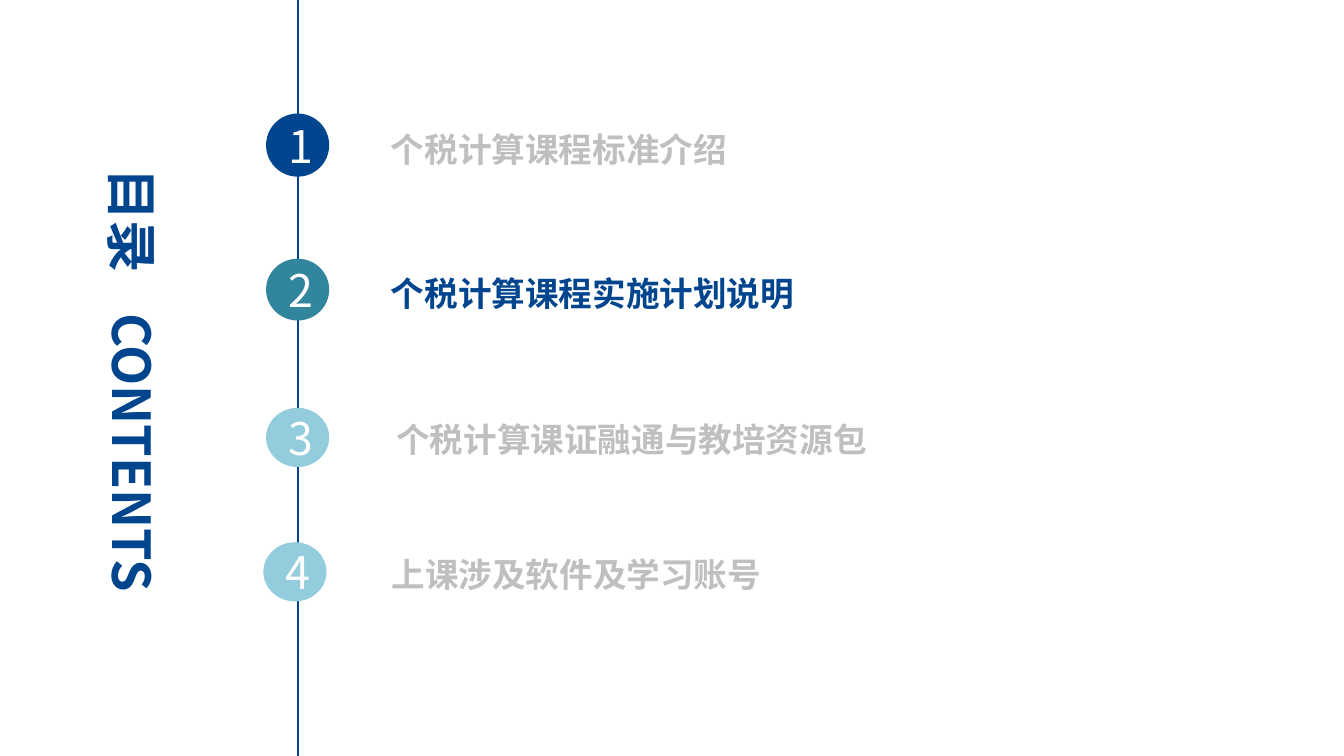
"""Build a contents slide with four numbered topics along a vertical line."""
import dataclasses

import lxml.etree
import pptx
import pptx.dml.color
import pptx.enum.shapes
import pptx.enum.text
import pptx.oxml.ns
import pptx.util

PX = 4572


@dataclasses.dataclass(frozen=True)
class Theme:
    navy: str = "01458E"
    teal: str = "31859C"
    sky: str = "93CDDD"
    gray: str = "BFBFBF"
    white: str = "FFFFFF"
    head: int = 28
    mark: int = 24
    body: int = 18
    line: float = 1.25
    latin: str = "Calibri"
    asian: str = "Noto Sans CJK SC"


def tint(code):
    return pptx.dml.color.RGBColor.from_string(code)


def place(*box):
    return [pptx.util.Emu(n * PX) for n in box]


class Deck:
    def __init__(self, theme, wide, high):
        self.theme = theme
        self.file = pptx.Presentation()
        self.file.slide_width, self.file.slide_height = place(wide, high)
        self.slide = self.file.slides.add_slide(self.file.slide_layouts[6])

    def run(self, para, text, size, color, face, bold=False):
        run = para.add_run()
        run.text = text
        font = run.font
        font.size = pptx.util.Pt(size)
        font.bold = bold
        font.color.rgb = tint(color)
        font.name = face
        east = lxml.etree.SubElement(font._element, pptx.oxml.ns.qn("a:ea"))
        east.set("typeface", self.theme.asian)

    def text(self, box, text, size, color, face, turn=0):
        shape = self.slide.shapes.add_textbox(*place(*box))
        shape.rotation = turn
        frame = shape.text_frame
        frame.word_wrap = not turn
        frame.auto_size = pptx.enum.text.MSO_AUTO_SIZE.SHAPE_TO_FIT_TEXT
        self.run(frame.paragraphs[0], text, size, color, face, True)

    def line(self, x, top, end):
        kind = pptx.enum.shapes.MSO_CONNECTOR.STRAIGHT
        line = self.slide.shapes.add_connector(kind, *place(x, top, x, end))
        line.line.color.rgb = tint(self.theme.navy)
        line.line.width = pptx.util.Pt(self.theme.line)
        props = line._element.spPr
        lxml.etree.SubElement(props, pptx.oxml.ns.qn("a:effectLst"))

    def badge(self, box, text, fill):
        kind = pptx.enum.shapes.MSO_SHAPE.OVAL
        shape = self.slide.shapes.add_shape(kind, *place(*box))
        shape.shadow.inherit = False
        shape.fill.solid()
        shape.fill.fore_color.rgb = tint(fill)
        shape.line.fill.background()
        frame = shape.text_frame
        frame.word_wrap = True
        frame.vertical_anchor = pptx.enum.text.MSO_ANCHOR.MIDDLE
        para = frame.paragraphs[0]
        para.alignment = pptx.enum.text.PP_ALIGN.CENTER
        self.run(para, text, self.theme.mark, self.theme.white, self.theme.asian)


def main():
    look = Theme()
    wide, high = 2000, 1125
    deck = Deck(look, wide, high)
    for box, word in (((99, 273, 198, 114), "目录"), ((-42, 630, 480, 114), "CONTENTS")):
        deck.text(box, word, look.head, look.navy, look.asian, 90)
    deck.line(443, 0, high)
    topics = (
        ((396, 169, 94, 94), look.navy, (562, 182, 1048, 80), look.gray, "个税计算课程标准介绍"),
        ((396, 385, 94, 92), look.teal, (562, 396, 1326, 80), look.navy, "个税计算课程实施计划说明"),
        ((396, 607, 94, 88), look.sky, (570, 614, 1316, 80), look.gray, "个税计算课证融通与教培资源包"),
        ((392, 807, 94, 88), look.sky, (563, 815, 1316, 80), look.gray, "上课涉及软件及学习账号"),
    )
    for num, (disc, fill, box, color, word) in enumerate(topics, 1):
        deck.badge(disc, str(num), fill)
        deck.text(box, word, look.body, color, look.latin)
    deck.file.save("out.pptx")


if __name__ == "__main__":
    main()
